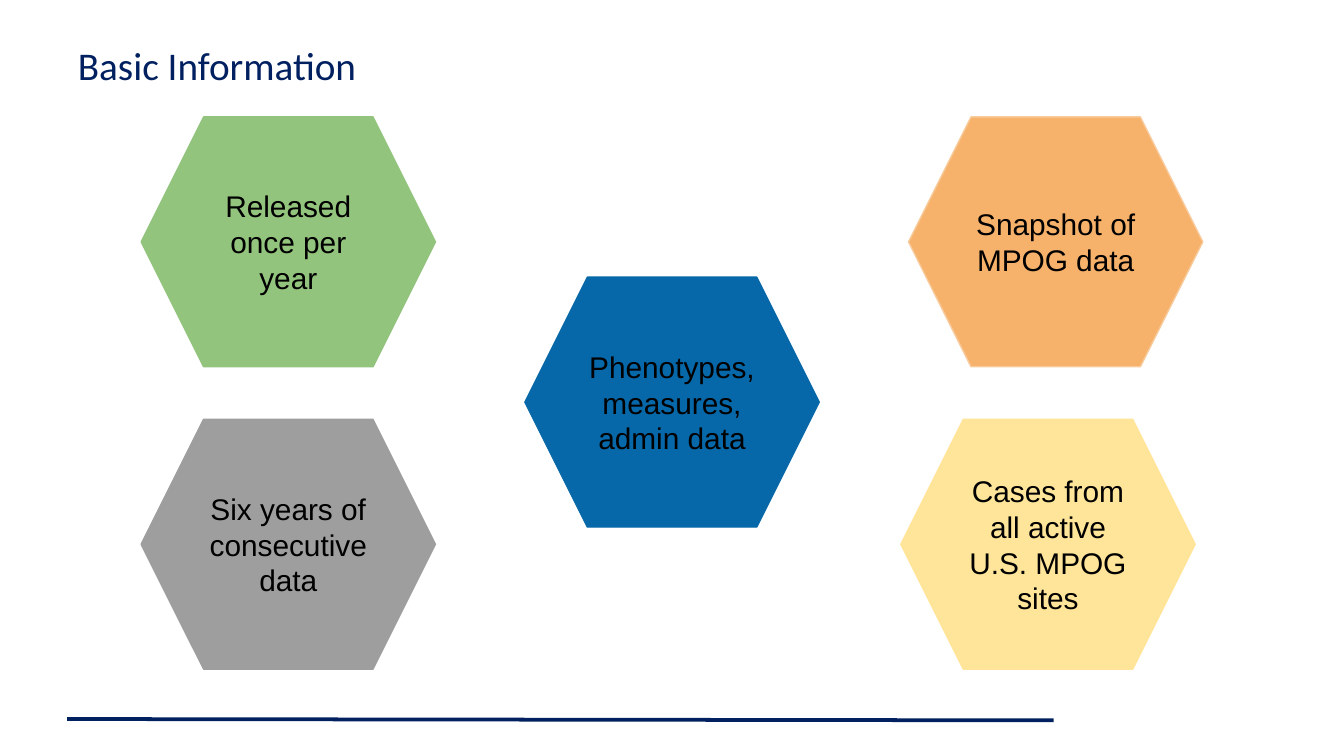
from pptx import Presentation
from pptx.dml.color import RGBColor
from pptx.enum.shapes import MSO_CONNECTOR as Connector, MSO_SHAPE as Shape
from pptx.enum.text import MSO_ANCHOR as Anchor, PP_ALIGN as Align
from pptx.oxml.ns import qn
from pptx.util import Inches, Pt
from lxml import etree

COLORS = {
    "navy": "002060", "black": "000000", "green": "93C47D", "blue": "0768A9",
    "orange": "F6B26B", "peach": "F9CB9C", "yellow": "FFE599", "gray": "9E9E9E",
}
LEFT, RIGHT = 1.05, 6.76          # first and last column of the hexagon grid
TOP, BOTTOM = 0.87, 3.12          # first and last row
COLUMN, ROW = (RIGHT - LEFT) / 2, BOTTOM - TOP
HEX_WIDTH, HEX_HEIGHT = 2.19, 1.86


def color(name):
    return RGBColor.from_string(COLORS[name])


def write(shape, text, font, size, ink, align, anchor, inset_x, inset_y):
    frame = shape.text_frame
    frame.word_wrap = True
    frame.vertical_anchor = anchor
    frame.margin_left = frame.margin_right = Inches(inset_x)
    frame.margin_top = frame.margin_bottom = Inches(inset_y)
    para = frame.paragraphs[0]
    para.alignment = align
    span = para.add_run()
    span.text = text
    span.font.name = font
    span.font.size = Pt(size)
    span.font.color.rgb = color(ink)


deck = Presentation()
deck.slide_width = Inches(10)
deck.slide_height = deck.slide_width * 9 // 16
page = deck.slides.add_slide(deck.slide_layouts[6])

# Footer rule
rule = page.shapes.add_connector(
    Connector.STRAIGHT, Inches(0.5), Inches(5.35), Inches(7.84), Inches(5.36))
rule.line.color.rgb = color("navy")
rule.line.width = Pt(2)
etree.SubElement(rule._element.spPr, qn("a:effectLst"))

# Title
title = page.shapes.add_textbox(Inches(0.5), Inches(0.27), Inches(9), Inches(0.43))
write(title, "Basic Information", font="Calibri", size=21, ink="navy",
      align=Align.LEFT, anchor=Anchor.BOTTOM, inset_x=0.08, inset_y=0.04)

# Hexagons: column, row, fill, outline, text
facts = [
    (0, 0, "green", "green", "Released once per year"),
    (1, 0.53, "blue", "blue", "Phenotypes, measures, admin data"),
    (2, 0, "orange", "peach", "Snapshot of MPOG data"),
    (1.98, 1, "yellow", "yellow", "Cases from all active U.S. MPOG sites"),
    (0, 1, "gray", "gray", "Six years of consecutive data"),
]
for column, row, fill, outline, text in facts:
    hexagon = page.shapes.add_shape(
        Shape.HEXAGON, Inches(LEFT + column * COLUMN), Inches(TOP + row * ROW),
        Inches(HEX_WIDTH), Inches(HEX_HEIGHT))
    hexagon.adjustments[0] = 0.25
    hexagon.shadow.inherit = False
    hexagon.fill.solid()
    hexagon.fill.fore_color.rgb = color(fill)
    hexagon.line.color.rgb = color(outline)
    hexagon.line.width = Pt(0.75)
    write(hexagon, text, font="Arial", size=16, ink="black",
          align=Align.CENTER, anchor=Anchor.MIDDLE, inset_x=0.1, inset_y=0.1)

deck.save("out.pptx")
